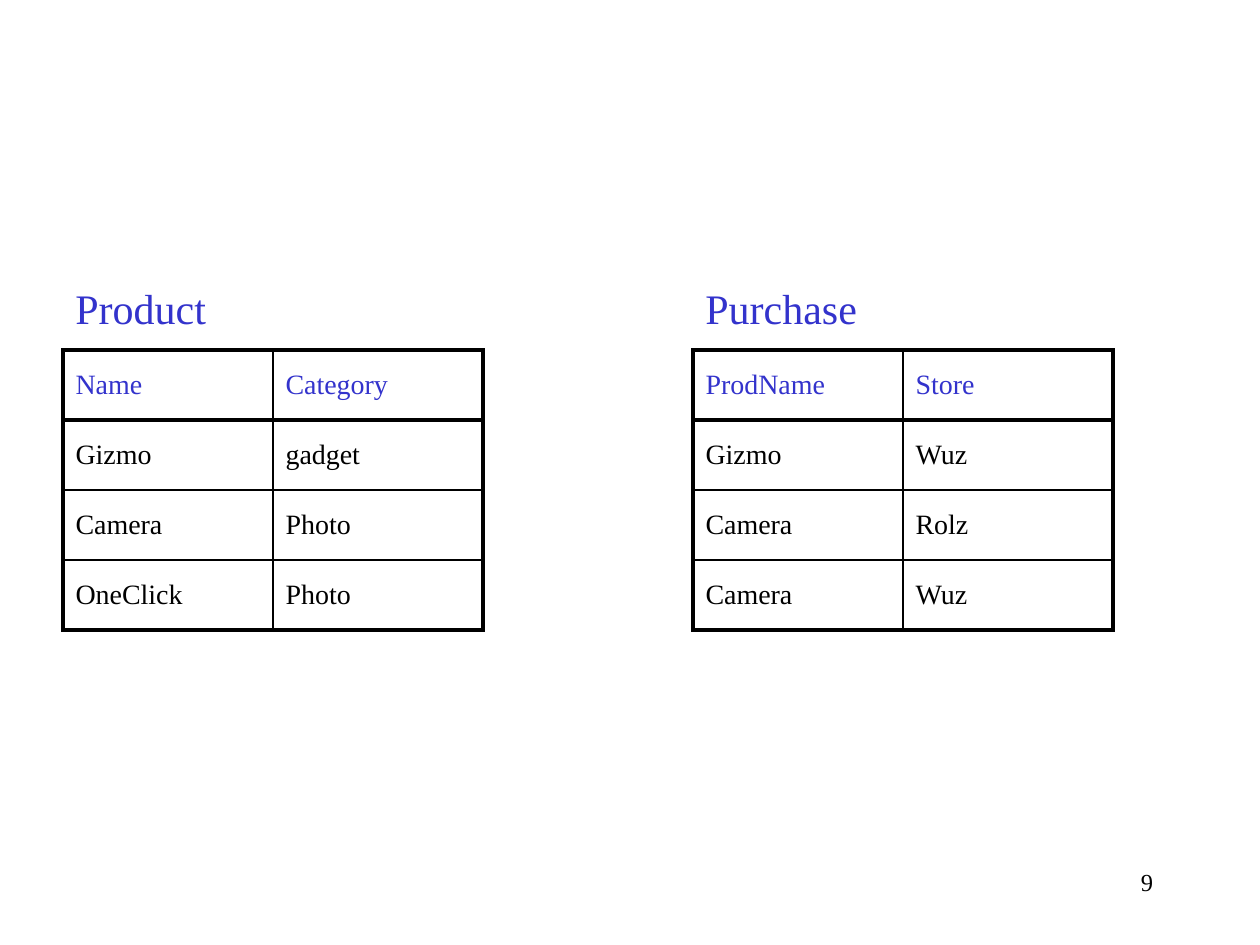
from lxml.etree import SubElement
from pptx import Presentation
from pptx.dml.color import RGBColor as RGB
from pptx.enum.text import MSO_ANCHOR as ANCHOR, PP_ALIGN as ALIGN
from pptx.oxml.ns import qn
from pptx.util import Pt

COLORS = {"heading": "3333CC", "body": "000000", "border": "000000"}
FONT = "Times New Roman"
THICK, THIN = 2.25, 1
TABLE_W, TABLE_H, TITLE_W, TITLE_H = 240, 160, 104, 42

RELATIONS = [
    ("Product", 36, [
        ("Name", "Category"),
        ("Gizmo", "gadget"),
        ("Camera", "Photo"),
        ("OneClick", "Photo"),
    ]),
    ("Purchase", 396, [
        ("ProdName", "Store"),
        ("Gizmo", "Wuz"),
        ("Camera", "Rolz"),
        ("Camera", "Wuz"),
    ]),
]


def write(tf, text, size, color, align=ALIGN.LEFT):
    p = tf.paragraphs[0]
    p.alignment = align
    r = p.add_run()
    r.text = text
    for name, value in {"name": FONT, "size": Pt(size), "bold": False}.items():
        setattr(r.font, name, value)
    r.font.color.rgb = RGB.from_string(COLORS[color])


def add_label(s, box, text, size, color, align=ALIGN.LEFT):
    tf = s.shapes.add_textbox(*map(Pt, box)).text_frame
    tf.word_wrap = True
    write(tf, text, size, color, align)


def set_borders(cell, widths):
    tc_pr = cell._tc.get_or_add_tcPr()
    for side, width in widths.items():
        ln = SubElement(tc_pr, qn(f"a:ln{side}"), w=str(Pt(width)))
        fill = SubElement(ln, qn("a:solidFill"))
        SubElement(fill, qn("a:srgbClr"), val=COLORS["border"])


def add_grid(s, box, rows):
    n_rows, n_cols = len(rows), len(rows[0])
    width, height = box[2:]
    table = s.shapes.add_table(n_rows, n_cols, *map(Pt, box)).table
    for name in ("first_row", "horz_banding"):
        setattr(table, name, False)
    for col in table.columns:
        col.width = Pt(width / n_cols)
    for i, values in enumerate(rows):
        table.rows[i].height = Pt(height / n_rows)
        for j, text in enumerate(values):
            cell = table.cell(i, j)
            cell.vertical_anchor = ANCHOR.MIDDLE
            set_borders(cell, {
                "L": THICK if j == 0 else THIN,
                "R": THICK if j == n_cols - 1 else THIN,
                "T": THICK if i <= 1 else THIN,
                "B": THICK if i in (0, n_rows - 1) else THIN,
            })
            cell.fill.background()
            write(cell.text_frame, text, 16, "body" if i else "heading")


def add_relation(s, box, title, rows):
    left, top, width, height = box
    add_label(s, (left, top, TITLE_W, 36), title, 24, "heading")
    add_grid(s, (left, top + TITLE_H, width, height - TITLE_H), rows)


def main():
    prs = Presentation()
    prs.slide_width, prs.slide_height = Pt(720), Pt(540)
    s = prs.slides.add_slide(prs.slide_layouts[6])
    for title, left, rows in RELATIONS:
        add_relation(s, (left, 158, TABLE_W, TITLE_H + TABLE_H), title, rows)
    add_label(s, (516, 492, 150, 36), "9", 14, "body", ALIGN.RIGHT)
    prs.save("out.pptx")


if __name__ == "__main__":
    main()
